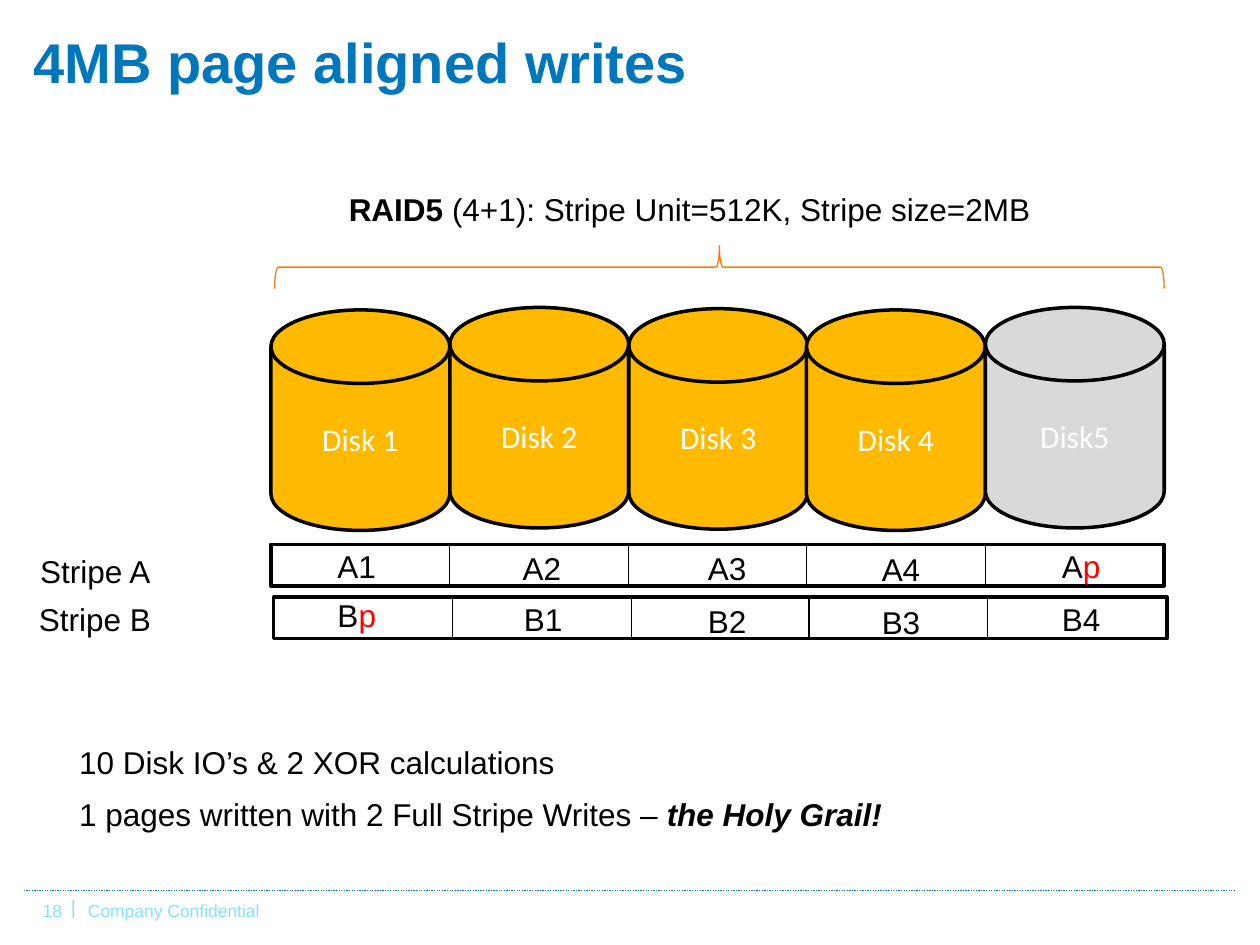
import lxml.etree
import pptx
import pptx.dml.color
import pptx.enum.dml
import pptx.enum.shapes
import pptx.enum.text
import pptx.oxml.ns
import pptx.util

PX = 9144
COLUMNS = 5
ROW_WIDTH = 709
ROW_HEIGHT = 33

THEME = {
    "title": {"size": 32, "bold": True, "color": "0076BB"},
    "body": {"size": 18, "color": "000000"},
    "strong": {"size": 18, "bold": True, "color": "000000"},
    "emphasis": {"size": 18, "bold": True, "italic": True, "color": "000000"},
    "parity": {"size": 18, "color": "FF0000"},
    "disk": {"size": 18, "name": "Calibri", "color": "FFFFFF"},
    "footer": {"size": 10, "color": "85E2FF"},
    "footer_bar": {"size": 11, "color": "85E2FF"},
    "data_fill": "FFBA00",
    "parity_fill": "D9D9D9",
    "outline": "000000",
    "brace": "F47C10",
    "rule": "0F73C3",
}


def write_runs(shape, runs):
    paragraph = shape.text_frame.paragraphs[0]
    for text, style in runs:
        run = paragraph.add_run()
        run.text = text
        for attribute, value in {"name": "Arial", **THEME[style]}.items():
            if attribute == "color":
                run.font.color.rgb = pptx.dml.color.RGBColor.from_string(value)
            else:
                setattr(run.font, attribute, pptx.util.Pt(value) if attribute == "size" else value)


def add_line(shapes, start_x, start_y, end_x, end_y, color):
    connector = shapes.add_connector(
        pptx.enum.shapes.MSO_CONNECTOR.STRAIGHT,
        start_x * PX, start_y * PX, end_x * PX, end_y * PX)
    connector.line.color.rgb = pptx.dml.color.RGBColor.from_string(THEME[color])
    connector.line.width = pptx.util.Pt(0.75)
    lxml.etree.SubElement(connector._element.spPr, pptx.oxml.ns.qn("a:effectLst"))
    return connector


presentation = pptx.Presentation()
presentation.slide_width = 1000 * PX
presentation.slide_height = 750 * PX
slide = presentation.slides.add_slide(presentation.slide_layouts[6])
outline_color = pptx.dml.color.RGBColor.from_string(THEME["outline"])

footer_rule = add_line(slide.shapes, 19, 707, 981, 707, "rule")
footer_rule.line.dash_style = pptx.enum.dml.MSO_LINE.ROUND_DOT

column_edges = [round(ROW_WIDTH * column / COLUMNS) for column in range(COLUMNS)]

disks = [("Disk 1", 246, "data_fill"), ("Disk 2", 244, "data_fill"), ("Disk 3", 245, "data_fill"),
         ("Disk 4", 246, "data_fill"), ("Disk5", 244, "parity_fill")]
for edge, (label, top, fill) in zip(column_edges, disks):
    disk = slide.shapes.add_shape(
        pptx.enum.shapes.MSO_SHAPE.FLOWCHART_MAGNETIC_DISK,
        (215 + edge) * PX, top * PX, 142 * PX, 175 * PX)
    disk.shadow.inherit = False
    disk.fill.solid()
    disk.fill.fore_color.rgb = pptx.dml.color.RGBColor.from_string(THEME[fill])
    disk.line.color.rgb = outline_color
    disk.line.width = pptx.util.Pt(2)
    disk.text_frame.vertical_anchor = pptx.enum.text.MSO_ANCHOR.MIDDLE
    disk.text_frame.paragraphs[0].alignment = pptx.enum.text.PP_ALIGN.CENTER
    write_runs(disk, [(label, "disk")])

for left, top in [(215, 432), (217, 474)]:
    stripe = slide.shapes.add_group_shape()
    frame = stripe.shapes.add_shape(
        pptx.enum.shapes.MSO_SHAPE.RECTANGLE,
        left * PX, top * PX, ROW_WIDTH * PX, ROW_HEIGHT * PX)
    frame.shadow.inherit = False
    frame.fill.background()
    frame.line.color.rgb = outline_color
    frame.line.width = pptx.util.Pt(2)
    for edge in column_edges[1:]:
        add_line(stripe.shapes, left + edge, top, left + edge, top + ROW_HEIGHT, "outline")

brace = slide.shapes.add_shape(
    pptx.enum.shapes.MSO_SHAPE.RIGHT_BRACE, 554 * PX, -141 * PX, 34 * PX, 706 * PX)
brace.rotation = 270
brace.shadow.inherit = False
brace.fill.background()
brace.line.color.rgb = pptx.dml.color.RGBColor.from_string(THEME["brace"])
brace.line.width = pptx.util.Pt(0.75)

texts = [
    (24, 709, 51, 27, [("18", "footer")]),
    (60, 709, 500, 27, [("Company Confidential", "footer")]),
    (47, 706, 19, 27, [("|", "footer_bar")]),
    (17, 17, 747, 64, [("4MB page aligned writes", "title")]),
    (267, 146, 623, 40, [("RAID5", "strong"), (" (4+1): Stripe Unit=512K, Stripe size=2MB", "body")]),
    (22, 433, 158, 40, [("Stripe A", "body")]),
    (258, 429, 53, 40, [("A1", "body")]),
    (405, 431, 69, 40, [("A2", "body")]),
    (552, 431, 54, 40, [("A3", "body")]),
    (690, 432, 54, 40, [("A4", "body")]),
    (833, 429, 54, 40, [("A", "body"), ("p", "parity")]),
    (21, 471, 158, 40, [("Stripe B", "body")]),
    (258, 468, 69, 40, [("B", "body"), ("p", "parity")]),
    (406, 471, 53, 40, [("B1", "body")]),
    (552, 473, 54, 40, [("B2", "body")]),
    (690, 474, 54, 40, [("B3", "body")]),
    (833, 471, 54, 40, [("B4", "body")]),
    (53, 585, 647, 40, [("10 Disk IO’s & 2 XOR calculations", "body")]),
    (53, 626, 697, 40, [("1 pages written with 2 Full Stripe Writes – ", "body"), ("the Holy Grail!", "emphasis")]),
]
for left, top, width, height, runs in texts:
    text_box = slide.shapes.add_textbox(left * PX, top * PX, width * PX, height * PX)
    text_box.text_frame.word_wrap = True
    write_runs(text_box, runs)

presentation.save("out.pptx")
